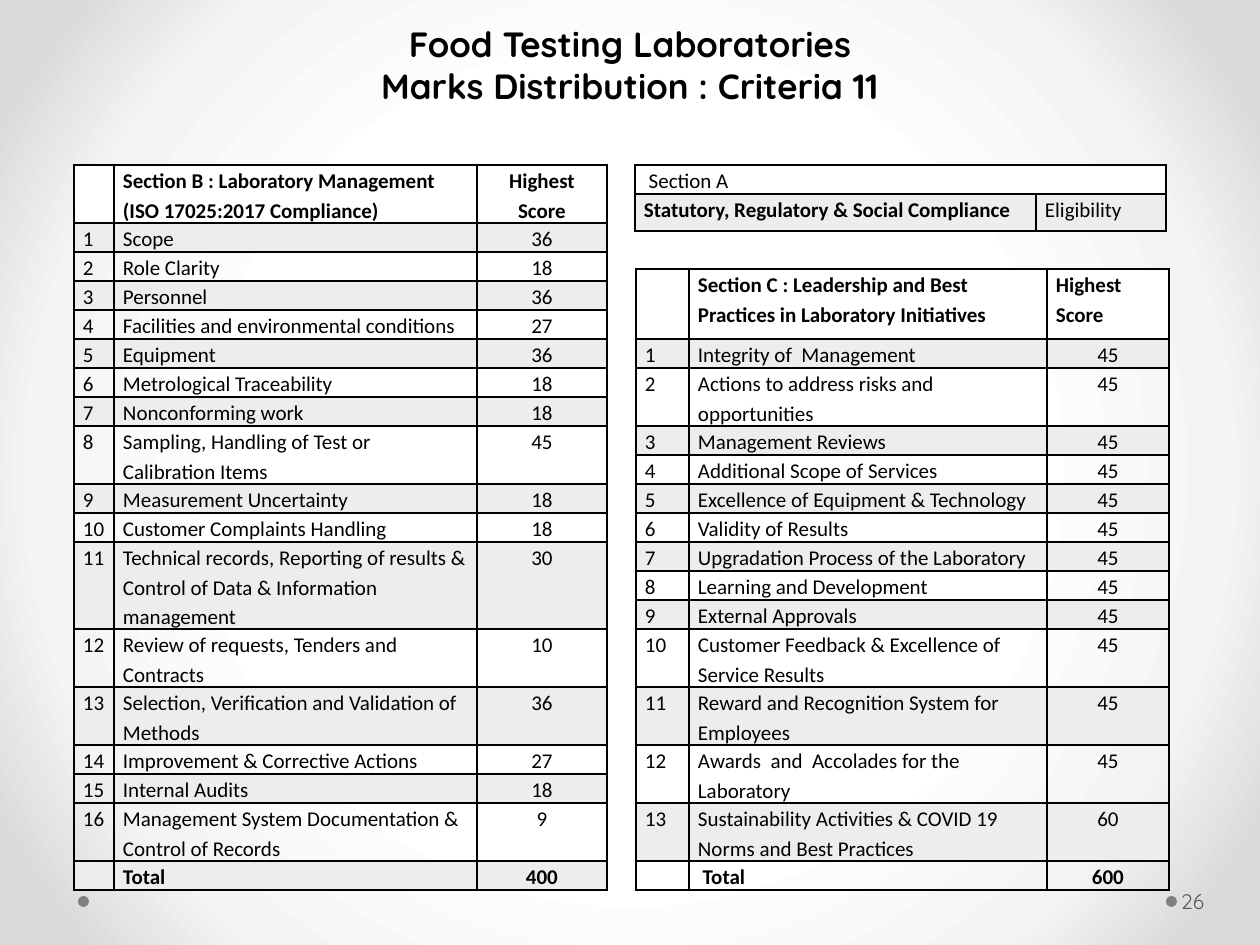
from pptx import Presentation, oxml, util as u
from pptx.dml.color import RGBColor
from pptx.enum import shapes, text
from pptx.oxml.ns import nsdecls, qn

PX = 914400 / 126
INK = RGBColor.from_string("000000")


def px(n):
    return u.Emu(round(n * PX))


def add_grid(left, top, widths, heights, rows, after, centred):
    """Add a ruled table; a leading * marks bold text, centred lists (row, column) cells."""
    frame = slide.shapes.add_table(len(rows), len(widths), px(left), px(top),
                                   px(sum(widths)), px(sum(heights)))
    grid = frame.table
    grid.first_row = grid.horz_banding = False
    for col, width in zip(grid.columns, widths):
        col.width = px(width)
    for r, row in enumerate(rows):
        grid.rows[r].height = px(heights[r])
        for c, words in enumerate(row):
            cell = grid.cell(r, c)
            cell.margin_left = cell.margin_right = px(9)
            cell.margin_top = cell.margin_bottom = 0
            props = cell._tc.get_or_add_tcPr()
            for side in "LRTB":
                props.append(oxml.parse_xml(
                    f'<a:ln{side} {nsdecls("a")} w="12700"><a:solidFill>'
                    f'<a:srgbClr val="000000"/></a:solidFill></a:ln{side}>'))
            if r and r % 2 == 0:
                cell.fill.background()
            else:
                cell.fill.solid()
                cell.fill.fore_color.rgb = RGBColor.from_string("EDEDED" if r else "FFFFFF")
            para = cell.text_frame.paragraphs[0]
            para.text = words.lstrip("*")
            para.line_spacing = 1.15
            para.space_after = u.Pt(after)
            if (r, c) in centred:
                para.alignment = text.PP_ALIGN.CENTER
            font = para.font
            font.name, font.size = "Calibri", u.Pt(12)
            font.bold = words.startswith("*")
            font.color.rgb = INK
            if not words:
                para._p.append(oxml.parse_xml(f'<a:endParaRPr {nsdecls("a")} sz="1200"/>'))
    return grid


deck = Presentation()
deck.slide_width, deck.slide_height = px(1260), px(945)
slide = deck.slides.add_slide(deck.slide_layouts[5])

# Background: white centre fading to grey corners
slide.background.fill.gradient()
old = next(slide.element.iter(qn("a:gradFill")))
stops = "".join(f'<a:gs pos="{at}000"><a:srgbClr val="{tone}"/></a:gs>'
                for at, tone in [(50, "FFFFFF"), (76, "F4F4F4"), (92, "DADADA")])
old.getparent().replace(old, oxml.parse_xml(
    f'<a:gradFill {nsdecls("a")} rotWithShape="1"><a:gsLst>{stops}</a:gsLst><a:path path="circle">'
    '<a:fillToRect l="50000" t="50000" r="50000" b="50000"/></a:path></a:gradFill>'))

# Footer dots and page number
for left in (1166, 78):
    dot = slide.shapes.add_shape(shapes.MSO_SHAPE.OVAL, px(left), px(896), px(11), px(11))
    dot.shadow.inherit = False
    dot.fill.solid()
    dot.fill.fore_color.rgb = RGBColor.from_string("808080")
    dot.line.fill.background()

page = slide.shapes.add_textbox(px(1177), px(876), px(77), px(50)).text_frame
page.word_wrap = True
page.vertical_anchor = text.MSO_ANCHOR.MIDDLE
page.margin_left = px(4)
para = page.paragraphs[0]
para.text = "26"
para.font.name, para.font.size = "Quicksand", u.Pt(12)
para.font.color.rgb = RGBColor.from_string("595959")

# Title
title = slide.shapes.title
title.left, title.top, title.width, title.height = px(63), px(16), px(1134), px(90)
title.text_frame.vertical_anchor = text.MSO_ANCHOR.TOP
title.text_frame.text = "Food Testing Laboratories\nMarks Distribution : Criteria 11"
for para in title.text_frame.paragraphs:
    para.alignment = text.PP_ALIGN.CENTER
    para.font.name, para.font.size, para.font.bold = "Quicksand", u.Pt(20), True
    para.font.color.rgb = INK

# Section A
legal = add_grid(635, 165, [401, 130], [26, 37], [
    ("\u00a0Section A", ""),
    ("*Statutory, Regulatory & Social Compliance", "Eligibility"),
], 10, [])
legal.cell(0, 0).merge(legal.cell(0, 1))

# Section B
labs = [
    ("Scope", 36),
    ("Role Clarity", 18),
    ("Personnel", 36),
    ("Facilities and environmental conditions", 27),
    ("Equipment", 36),
    ("Metrological Traceability", 18),
    ("Nonconforming work", 18),
    ("Sampling, Handling of Test or Calibration Items", 45),
    ("Measurement Uncertainty", 18),
    ("Customer Complaints Handling", 18),
    ("Technical records, Reporting of results & Control of Data & Information management", 30),
    ("Review of requests, Tenders and Contracts", 10),
    ("Selection, Verification and Validation of Methods", 36),
    ("Improvement & Corrective Actions", 27),
    ("Internal Audits", 18),
    ("Management System Documentation & Control of Records", 9),
]
rows = [("", "*Section B : Laboratory Management (ISO 17025:2017 Compliance)", "*Highest Score")]
rows += [(str(n), name, str(score)) for n, (name, score) in enumerate(labs, 1)]
rows.append(("", "*Total", "*400"))
heights = [26] * len(rows)
heights[11] = 53
add_grid(74, 165, [40, 363, 130], heights, rows, 6, [(r, 2) for r in range(len(rows))])

# Section C
goals = [
    "Integrity of  Management",
    "Actions to address risks and opportunities",
    "Management Reviews",
    "Additional Scope of Services",
    "Excellence of Equipment & Technology",
    "Validity of Results",
    "Upgradation Process of the Laboratory",
    "Learning and Development",
    "External Approvals",
    "Customer Feedback & Excellence of Service Results",
    "Reward and Recognition System for Employees",
    "Awards  and  Accolades for the Laboratory",
    "Sustainability Activities & COVID 19 Norms and Best Practices",
]
rows = [("", "*Section C : Leadership and Best Practices in Laboratory Initiatives", "*Highest Score")]
rows += [(str(n), name, "60" if n == len(goals) else "45") for n, name in enumerate(goals, 1)]
rows.append(("", "*\u00a0Total", "*600"))
add_grid(636, 269, [53, 358, 122], [70] + [26] * (len(rows) - 1), rows, 10,
         [(r, 2) for r in range(1, len(rows))])

deck.save("out.pptx")
